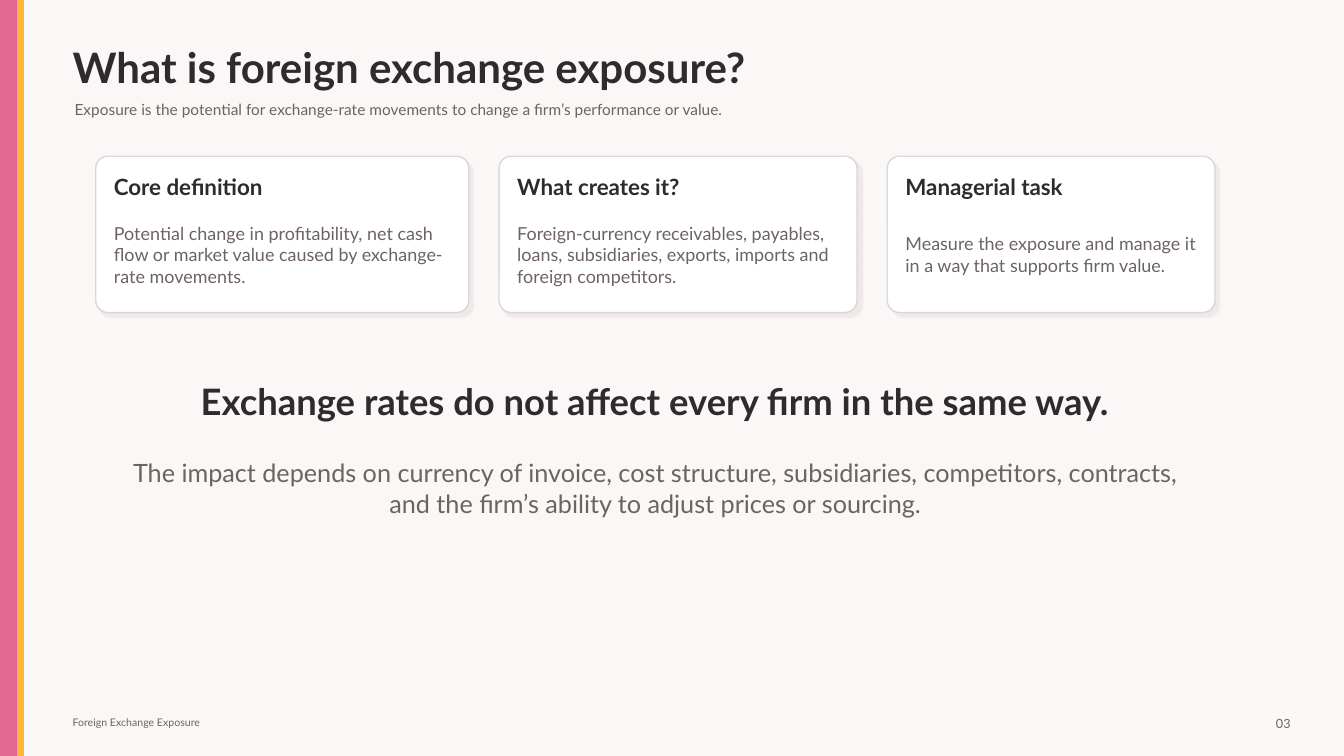
from dataclasses import dataclass

from lxml import etree
from pptx import Presentation
from pptx import util as u
from pptx.dml.color import RGBColor
from pptx.enum import shapes, text
from pptx.oxml.ns import qn

PX = 9144
LEFT, CENTER, RIGHT = text.PP_ALIGN.LEFT, text.PP_ALIGN.CENTER, text.PP_ALIGN.RIGHT


@dataclass(frozen=True)
class Theme:
    font: str = "Lato"
    canvas: str = "FAF8F6"
    pink: str = "E46791"
    amber: str = "FAB938"
    ink: str = "2F2A2D"
    muted: str = "6D6264"
    card: str = "FFFFFF"
    border: str = "D8CCD0"
    shadow: str = "B8ADA8"
    title: float = 30
    statement: float = 26
    explanation: float = 18
    heading: float = 16
    body: float = 12.8
    subtitle: float = 11
    number: float = 9
    footer: float = 7.5


THEME = Theme()
CARD_LEFT, CARD_TOP, CARD_HEIGHT = 95, 155, 155
CARD_GAP, CARD_PAD, CARD_RADIUS = 30, 18, 12
CARDS = [
    (370, "Core definition",
     "Potential change in profitability, net cash flow or market value caused by exchange-rate movements."),
    (355, "What creates it?",
     "Foreign-currency receivables, payables, loans, subsidiaries, exports, imports and foreign competitors."),
    (325, "Managerial task",
     "Measure the exposure and manage it in a way that supports firm value."),
]


def px(*lengths):
    return [u.Emu(length * PX) for length in lengths]


def color(code):
    return RGBColor.from_string(code)


def write(box, words, size, ink, bold=False, align=LEFT):
    frame = box.text_frame
    frame.word_wrap = True
    frame.auto_size = text.MSO_AUTO_SIZE.NONE
    frame.vertical_anchor = text.MSO_ANCHOR.MIDDLE
    frame.margin_left = frame.margin_top = frame.margin_right = frame.margin_bottom = 0
    para = frame.paragraphs[0]
    para.alignment = align
    span = para.add_run()
    span.text = words
    span.font.name = THEME.font
    span.font.size = u.Pt(size)
    span.font.bold = bold
    span.font.color.rgb = color(ink)


def add_title(page, place, words):
    box = page.shapes.title
    box.left, box.top, box.width, box.height = px(*place)
    write(box, words, THEME.title, THEME.ink, bold=True)


def add_text(page, place, words, size, ink=THEME.muted, bold=False, align=LEFT):
    write(page.shapes.add_textbox(*px(*place)), words, size, ink, bold, align)


def add_block(page, kind, place, fill, line):
    block = page.shapes.add_shape(kind, *px(*place))
    block.shadow.inherit = False
    block.fill.solid()
    block.fill.fore_color.rgb = color(fill)
    block.line.color.rgb = color(line)
    block.line.width = u.Pt(1)
    return block


def add_alpha(tint, percent):
    etree.SubElement(tint, qn("a:alpha"), val=str(percent * 1000))


def add_card(page, left, width, heading, body):
    place = (left, CARD_TOP, width, CARD_HEIGHT)
    card = add_block(page, shapes.MSO_SHAPE.ROUNDED_RECTANGLE, place, THEME.card, THEME.border)
    card.adjustments[0] = CARD_RADIUS / CARD_HEIGHT
    properties = card.element.spPr
    add_alpha(properties.find(qn("a:ln")).find(".//" + qn("a:srgbClr")), 80)
    shadow = etree.SubElement(
        properties.find(qn("a:effectLst")), qn("a:outerShdw"),
        blurRad=str(u.Pt(1)), dist=str(u.Pt(4)), dir=str(45 * 60000),
        algn="tl", rotWithShape="0")
    add_alpha(etree.SubElement(shadow, qn("a:srgbClr"), val=THEME.shadow), 18)
    inner_left, inner_width = left + CARD_PAD, width - 2 * CARD_PAD
    add_text(page, (inner_left, CARD_TOP + 16, inner_width, 28), heading,
             THEME.heading, THEME.ink, bold=True)
    add_text(page, (inner_left, CARD_TOP + 55, inner_width, 85), body, THEME.body)


def main():
    deck = Presentation()
    deck.slide_width, deck.slide_height = u.Inches(13.33), u.Inches(7.5)
    page = deck.slides.add_slide(deck.slide_layouts[5])
    page.background.fill.solid()
    page.background.fill.fore_color.rgb = color(THEME.canvas)

    for left, width, fill in ((0, 18, THEME.pink), (18, 5, THEME.amber)):
        add_block(page, shapes.MSO_SHAPE.RECTANGLE, (left, 0, width, 750), fill, fill)

    add_title(page, (72, 42, 1190, 48), "What is foreign exchange exposure?")
    add_text(page, (74, 94, 1140, 28),
             "Exposure is the potential for exchange-rate movements to change a firm’s performance or value.",
             THEME.subtitle)

    left = CARD_LEFT
    for width, heading, body in CARDS:
        add_card(page, left, width, heading, body)
        left += width + CARD_GAP

    add_text(page, (100, 375, 1100, 45), "Exchange rates do not affect every firm in the same way.",
             THEME.statement, THEME.ink, bold=True, align=CENTER)
    add_text(page, (115, 445, 1070, 78),
             "The impact depends on currency of invoice, cost structure, subsidiaries, competitors, "
             "contracts, and the firm’s ability to adjust prices or sourcing.",
             THEME.explanation, align=CENTER)

    add_text(page, (72, 708, 350, 18), "Foreign Exchange Exposure", THEME.footer)
    add_text(page, (1245, 705, 35, 25), "03", THEME.number, align=RIGHT)
    deck.save("out.pptx")


if __name__ == "__main__":
    main()
